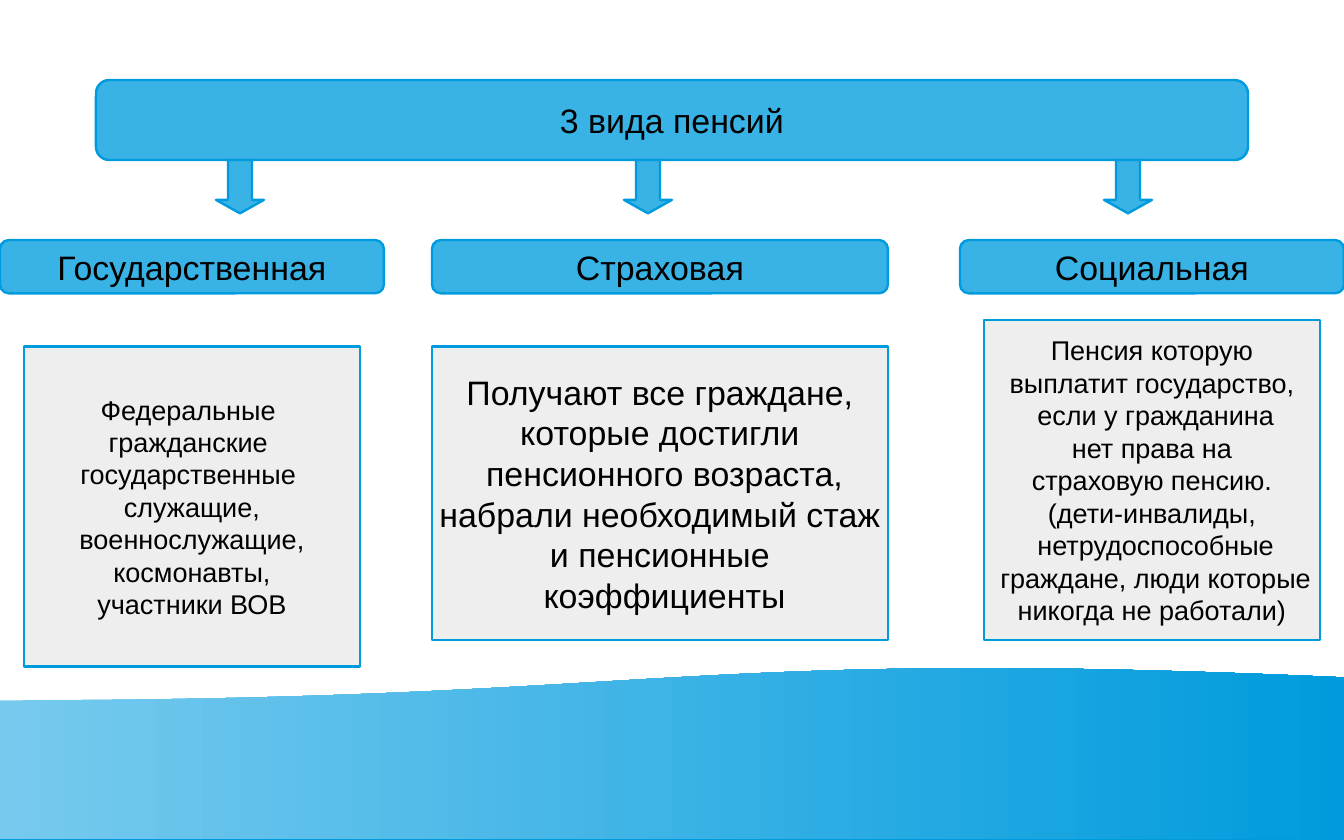
from lxml import etree
from pptx import Presentation
from pptx.dml.color import RGBColor
from pptx.enum.shapes import MSO_SHAPE
from pptx.enum.text import MSO_ANCHOR, PP_ALIGN
from pptx.oxml.ns import qn
from pptx.util import Pt

ROUNDED, RECTANGLE = MSO_SHAPE.ROUNDED_RECTANGLE, MSO_SHAPE.RECTANGLE
DOWN_ARROW, WAVE = MSO_SHAPE.DOWN_ARROW, MSO_SHAPE.FLOWCHART_DOCUMENT
MIDDLE, CENTER = MSO_ANCHOR.MIDDLE, PP_ALIGN.CENTER

BLACK = RGBColor(0x00, 0x00, 0x00)
BLUE = RGBColor(0x39, 0xB2, 0xE5)
DARK_BLUE = RGBColor(0x00, 0x9B, 0xDD)
LIGHT_BLUE = RGBColor(0x77, 0xCA, 0xEE)
GREY = RGBColor(0xEE, 0xEE, 0xEE)

SLIDE_WIDTH, SLIDE_HEIGHT = 793.7, 496.06
WAVE_TOP, WAVE_HEIGHT = 393.3, 102.4
HEADING_TOP, ROW_HEIGHT = 141.73, 31.5
ARROW_TOP, ARROW_WIDTH = 94.49, 28.35

# Places are (left, width) for headings and (left, top, width, height) for cards.
PENSIONS = [
    {"heading": "Государственная", "heading_place": (0, 226.77), "arrow_left": 127.56,
     "card_place": (14.17, 204.72, 198.43, 188.98), "size": 16,
     "lines": ["Федеральные ", "гражданские ", "государственные ", "служащие,",
               "военнослужащие,", "космонавты,", "участники ВОВ"]},
    {"heading": "Страховая", "heading_place": (255.12, 269.29), "arrow_left": 368.5,
     "card_place": (255.12, 204.72, 269.29, 173.23), "size": 20,
     "lines": ["Получают все граждане,", "которые достигли", " пенсионного возраста,",
               " набрали необходимый стаж ", "и пенсионные", " коэффициенты"]},
    {"heading": "Социальная", "heading_place": (566.93, 226.77), "arrow_left": 652,
     "card_place": (581.1, 188.98, 198.43, 188.98), "size": 16,
     "lines": ["Пенсия которую", "выплатит государство,", " если у гражданина",
               "нет права на", "страховую пенсию.", "(дети-инвалиды,",
               " нетрудоспособные", " граждане, люди которые", "никогда не работали)"]},
]

presentation = Presentation()
presentation.slide_width = Pt(SLIDE_WIDTH)
presentation.slide_height = Pt(SLIDE_HEIGHT)
slide = presentation.slides.add_slide(presentation.slide_layouts[6])


def add_outlined_shape(kind, place, color):
    shape = slide.shapes.add_shape(kind, *map(Pt, place))
    shape.shadow.inherit = False
    shape.fill.solid()
    shape.fill.fore_color.rgb = color
    shape.line.color.rgb = DARK_BLUE
    shape.line.width = Pt(1.42)
    return shape


def write_lines(shape, lines, size):
    """Centre the lines in the shape, one paragraph each."""
    frame = shape.text_frame
    frame.word_wrap = False
    frame.vertical_anchor = MIDDLE
    frame.text = "\n".join(lines)
    font_format = {"name": "Arial", "size": Pt(size)}
    for paragraph in frame.paragraphs:
        paragraph.alignment = CENTER
        font = paragraph.runs[0].font
        font.color.rgb = BLACK
        for name, value in font_format.items():
            setattr(font, name, value)


# Wave along the bottom, turned over, with a thin solid shadow below it
wave = slide.shapes.add_shape(WAVE, 0, Pt(WAVE_TOP), Pt(SLIDE_WIDTH), Pt(WAVE_HEIGHT))
wave.line.fill.background()
wave.fill.gradient()
wave.fill.gradient_angle = 180
for stop, color, position in zip(wave.fill.gradient_stops, (LIGHT_BLUE, DARK_BLUE), (0, 1)):
    stop.color.rgb = color
    stop.position = position
wave.shadow.inherit = False
properties = wave.element.spPr
for flip in ("flipH", "flipV"):
    properties.find(qn("a:xfrm")).set(flip, "1")
shadow = etree.SubElement(properties.find(qn("a:effectLst")), qn("a:outerShdw"),
                          blurRad="0", dist=str(Pt(0.9)), dir="5400000", rotWithShape="0")
etree.SubElement(shadow, qn("a:srgbClr"), val=str(DARK_BLUE))

# Title bar
title = add_outlined_shape(ROUNDED, (56.69, 47.24, 680.31, 47.24), BLUE)
write_lines(title, ["3 вида пенсий"], 20)

# One column per kind of pension: arrow, heading, card
for pension in PENSIONS:
    arrow_place = (pension["arrow_left"], ARROW_TOP, ARROW_WIDTH, ROW_HEIGHT)
    arrow = add_outlined_shape(DOWN_ARROW, arrow_place, BLUE)
    arrow.adjustments[1] = 0.28

    left, width = pension["heading_place"]
    heading = add_outlined_shape(ROUNDED, (left, HEADING_TOP, width, ROW_HEIGHT), BLUE)
    write_lines(heading, [pension["heading"]], 20)

    card = add_outlined_shape(RECTANGLE, pension["card_place"], GREY)
    write_lines(card, pension["lines"], pension["size"])

presentation.save("out.pptx")
